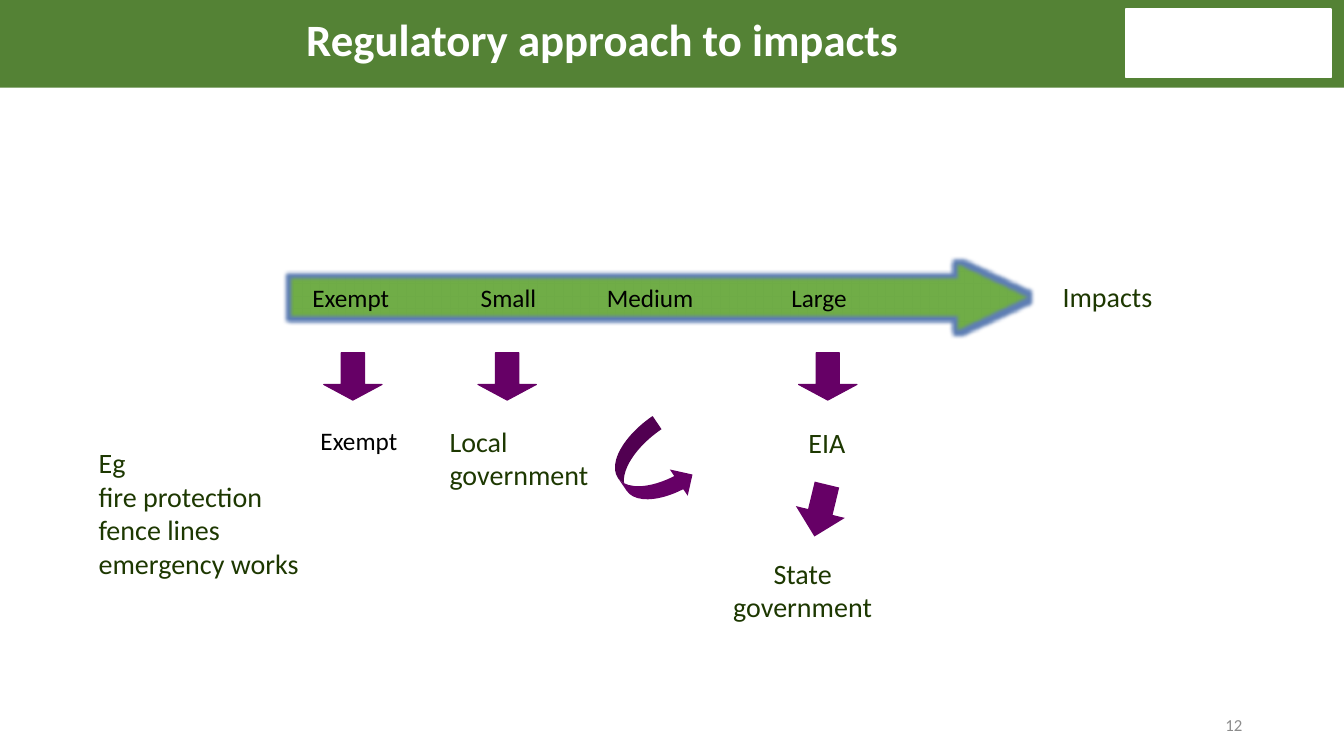
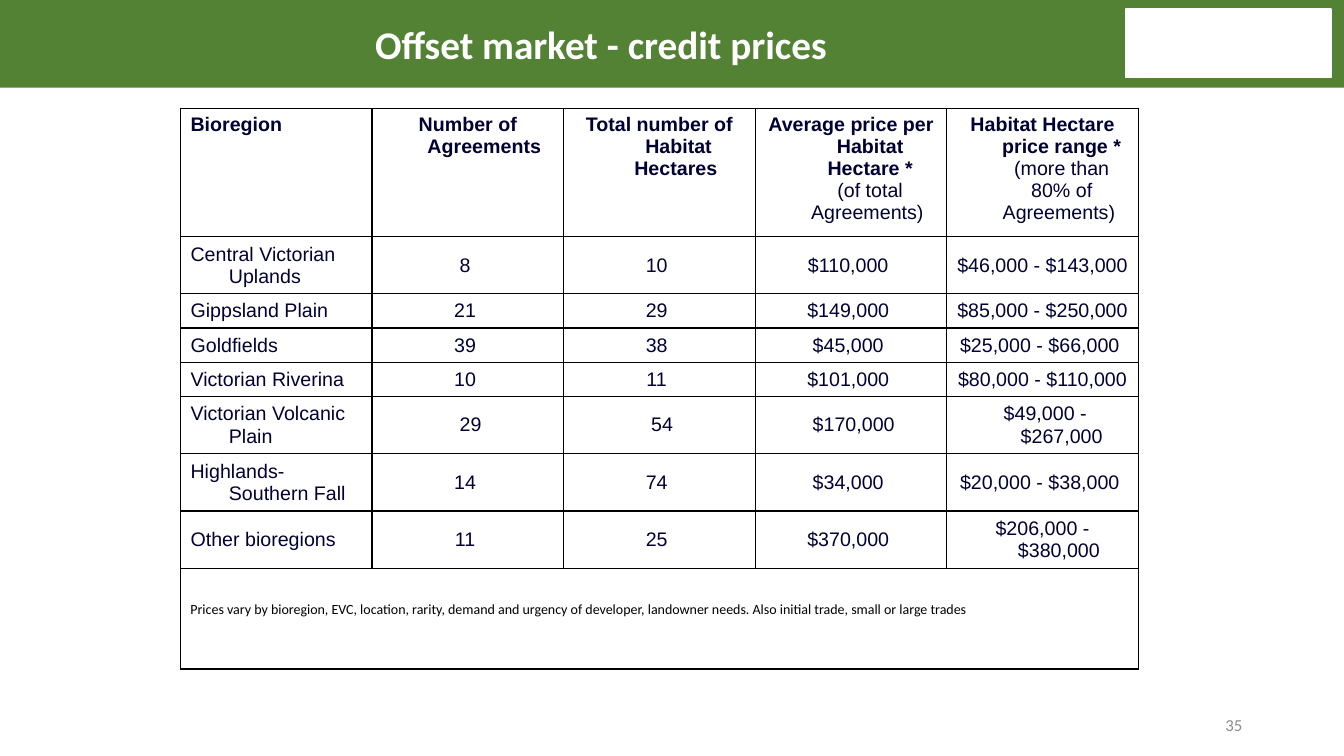
from dataclasses import dataclass

from lxml.etree import SubElement
from pptx import Presentation
from pptx.dml.color import RGBColor
from pptx.enum.shapes import MSO_SHAPE
from pptx.enum.text import MSO_ANCHOR, MSO_AUTO_SIZE, PP_ALIGN
from pptx.oxml.ns import qn
from pptx.util import Inches, Pt


@dataclass(frozen=True)
class Theme:
    band: str = "548235"
    white: str = "FFFFFF"
    black: str = "000000"
    number: str = "8C8C8C"
    scale: str = "70AD47"
    glow: str = "5F7FB4"
    arrow: str = "660066"
    label: str = "1D3801"
    cell: str = "000033"
    body_font: str = "Calibri"
    table_font: str = "Arial"
    title_size: int = 32
    small_title_size: int = 28
    label_size: int = 20
    scale_size: int = 18
    cell_size: int = 14
    number_size: int = 12
    note_size: int = 10


class SlideBuilder:
    def __init__(self, deck, theme):
        self.deck = deck
        self.theme = theme
        self.page = None

    def start_page(self, number):
        theme = self.theme
        self.page = self.deck.slides.add_slide(self.deck.slide_layouts[6])
        self.shape(MSO_SHAPE.RECTANGLE, (0, -0.03, 13.33, 0.9), theme.band)
        self.shape(MSO_SHAPE.RECTANGLE, (11.17, 0.09, 2.03, 0.68), theme.white, 1)
        box = self.text(number, (11.54, 7.04, 0.88, 0.31), theme.number_size,
                        theme.number, PP_ALIGN.RIGHT)
        box.text_frame.auto_size = MSO_AUTO_SIZE.NONE
        box.text_frame.vertical_anchor = MSO_ANCHOR.MIDDLE

    def title(self, words, place, size):
        self.text(words, place, size, self.theme.white, PP_ALIGN.CENTER, True)

    def shape(self, kind, place, color, line_width=0, adjustments=(), rotation=0):
        shape = self.page.shapes.add_shape(kind, *map(Inches, place))
        shape.shadow.inherit = False
        shape.fill.solid()
        shape.fill.fore_color.rgb = RGBColor.from_string(color)
        if line_width:
            shape.line.color.rgb = RGBColor.from_string(color)
            shape.line.width = Pt(line_width)
        else:
            shape.line.fill.background()
        for index, value in enumerate(adjustments):
            shape.adjustments[index] = value
        shape.rotation = rotation
        return shape

    def glow(self, shape, radius, soft_radius):
        effects = shape._element.spPr.find(qn("a:effectLst"))
        glow = SubElement(effects, qn("a:glow"), rad=str(Pt(radius)))
        SubElement(glow, qn("a:srgbClr"), val=self.theme.glow)
        SubElement(effects, qn("a:softEdge"), rad=str(Pt(soft_radius)))

    def style(self, paragraph, font, size, color, bold=False):
        for span in paragraph.runs:
            span.font.name = font
            span.font.size = Pt(size)
            span.font.bold = bold
            span.font.color.rgb = RGBColor.from_string(color)

    def text(self, words, place, size, color, align=PP_ALIGN.LEFT, bold=False):
        box = self.page.shapes.add_textbox(*map(Inches, place))
        frame = box.text_frame
        frame.word_wrap = True
        frame.auto_size = MSO_AUTO_SIZE.SHAPE_TO_FIT_TEXT
        frame.text = words
        for para in frame.paragraphs:
            para.alignment = align
            self.style(para, self.theme.body_font, size, color, bold)
        return box

    def border(self, cell):
        properties = cell._tc.get_or_add_tcPr()
        for side in ("lnL", "lnR", "lnT", "lnB"):
            line = SubElement(properties, qn(f"a:{side}"), w=str(Pt(1)))
            fill = SubElement(line, qn("a:solidFill"))
            SubElement(fill, qn("a:srgbClr"), val=self.theme.black)

    def fill_cell(self, cell, words, is_header, is_first):
        cell.vertical_anchor = MSO_ANCHOR.TOP if is_header else MSO_ANCHOR.MIDDLE
        para = cell.text_frame.paragraphs[0]
        para.text = words
        para.alignment = PP_ALIGN.LEFT if is_first else PP_ALIGN.CENTER
        hanging = Inches(0.38)
        properties = para._p.get_or_add_pPr()
        properties.set("marL", str(hanging))
        properties.set("indent", str(-hanging))
        self.style(para, self.theme.table_font, self.theme.cell_size,
                   self.theme.cell, is_header)
        for span in para.runs[1:]:
            span.font.bold = False

    def table(self, rows, place, heights):
        frame = self.page.shapes.add_table(len(heights), len(rows[0]),
                                           *map(Inches, place))
        table = frame.table
        table.first_row = False
        table.horz_banding = False
        for row, height in zip(table.rows, heights):
            row.height = Inches(height)
        for cell in table.iter_cells():
            self.border(cell)
            cell.fill.background()
        for row_index, row in enumerate(rows):
            for column_index, words in enumerate(row):
                self.fill_cell(table.cell(row_index, column_index), words,
                               row_index == 0, column_index == 0)
        last = len(heights) - 1
        table.cell(last, 0).merge(table.cell(last, len(rows[0]) - 1))


PRICES = [
    ("Bioregion", "Number of Agreements ", "Total number of Habitat Hectares ",
     "Average price per Habitat Hectare *\v(of total Agreements) ",
     "Habitat Hectare price range *\v(more than 80% of Agreements) "),
    ("Central Victorian Uplands", "8 ", "10 ", "$110,000 ", "$46,000 - $143,000 "),
    ("Gippsland Plain", "21 ", "29 ", "$149,000 ", "$85,000 - $250,000 "),
    ("Goldfields", "39 ", "38 ", "$45,000 ", "$25,000 - $66,000 "),
    ("Victorian Riverina", "10 ", "11 ", "$101,000 ", "$80,000 - $110,000 "),
    ("Victorian Volcanic Plain", " 29", " 54", " $170,000", " $49,000 - $267,000"),
    ("Highlands-Southern Fall", "14 ", "74 ", "$34,000 ", "$20,000 - $38,000 "),
    ("Other bioregions", "11 ", "25 ", "$370,000 ", "$206,000 - $380,000 "),
]


def build_impacts(builder):
    theme = builder.theme
    builder.start_page("12")
    builder.title("Regulatory approach to impacts", (0.89, 0.07, 10.17, 0.64),
                  theme.title_size)
    scale = builder.shape(MSO_SHAPE.STRIPED_RIGHT_ARROW, (2.75, 2.58, 7.5, 0.72),
                          theme.scale, 0.75, (0.56, 1.08))
    builder.glow(scale, 5, 2.5)

    for words, left, top, width in (
        ("Exempt", 3, 2.75, 1.83),
        ("Small", 4.67, 2.75, 1.17),
        ("Medium", 5.92, 2.75, 1.5),
        ("Large", 7.75, 2.75, 1.25),
        ("Exempt", 3.08, 4.17, 1.42),
    ):
        builder.text(words, (left, top, width, 0.4), theme.scale_size, theme.black)

    for words, place, align in (
        ("Impacts", (10.44, 2.72, 1.25, 0.44), PP_ALIGN.LEFT),
        ("Eg\nfire protection\nfence lines\nemergency works",
         (0.88, 4.37, 2.5, 1.75), PP_ALIGN.LEFT),
        ("Local government", (4.36, 4.16, 1.75, 0.77), PP_ALIGN.LEFT),
        ("EIA", (7.92, 4.17, 1, 0.44), PP_ALIGN.LEFT),
        ("State government", (7, 5.47, 1.92, 0.77), PP_ALIGN.CENTER),
    ):
        builder.text(words, place, theme.label_size, theme.label, align)

    for left in (3.21, 4.74, 7.92):
        builder.shape(MSO_SHAPE.DOWN_ARROW, (left, 3.5, 0.58, 0.47), theme.arrow,
                      0.75, (0.4, 0.33))
    builder.shape(MSO_SHAPE.DOWN_ARROW, (7.89, 4.8, 0.5, 0.53), theme.arrow,
                  rotation=13.6)
    builder.shape(MSO_SHAPE.CURVED_RIGHT_ARROW, (6.14, 4.23, 0.63, 0.86),
                  theme.arrow, adjustments=(0.25, 0.5, 0.25), rotation=325.7)


def build_prices(builder):
    theme = builder.theme
    builder.start_page("35")
    builder.title("Offset market - credit prices", (1.01, 0.15, 9.9, 0.57),
                  theme.small_title_size)
    single, double = 0.34, 0.55
    heights = (1.23, double, single, single, single, double, double, double, 1)
    builder.table(PRICES, (1.79, 1.08, 9.5, sum(heights)), heights)
    builder.text("Prices vary by bioregion, EVC, location, rarity, demand and urgency "
                 "of developer, landowner needs. Also initial trade, small or large "
                 "trades", (1.79, 5.91, 9.21, 0.27), theme.note_size, theme.black)


def main():
    deck = Presentation()
    deck.slide_width = Inches(13.33)
    deck.slide_height = Inches(7.5)
    builder = SlideBuilder(deck, Theme())
    build_impacts(builder)
    build_prices(builder)
    deck.save("out.pptx")


if __name__ == "__main__":
    main()
